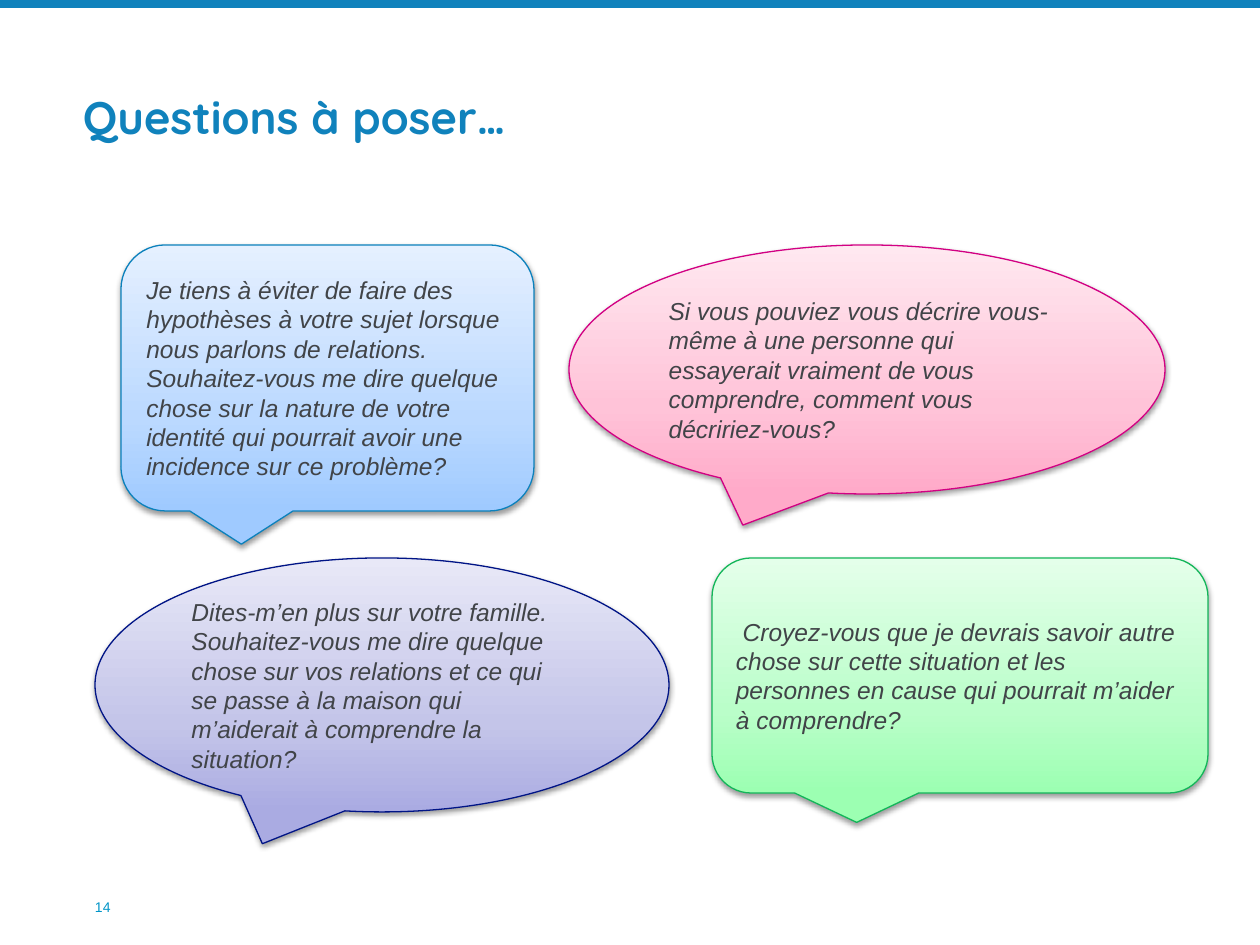
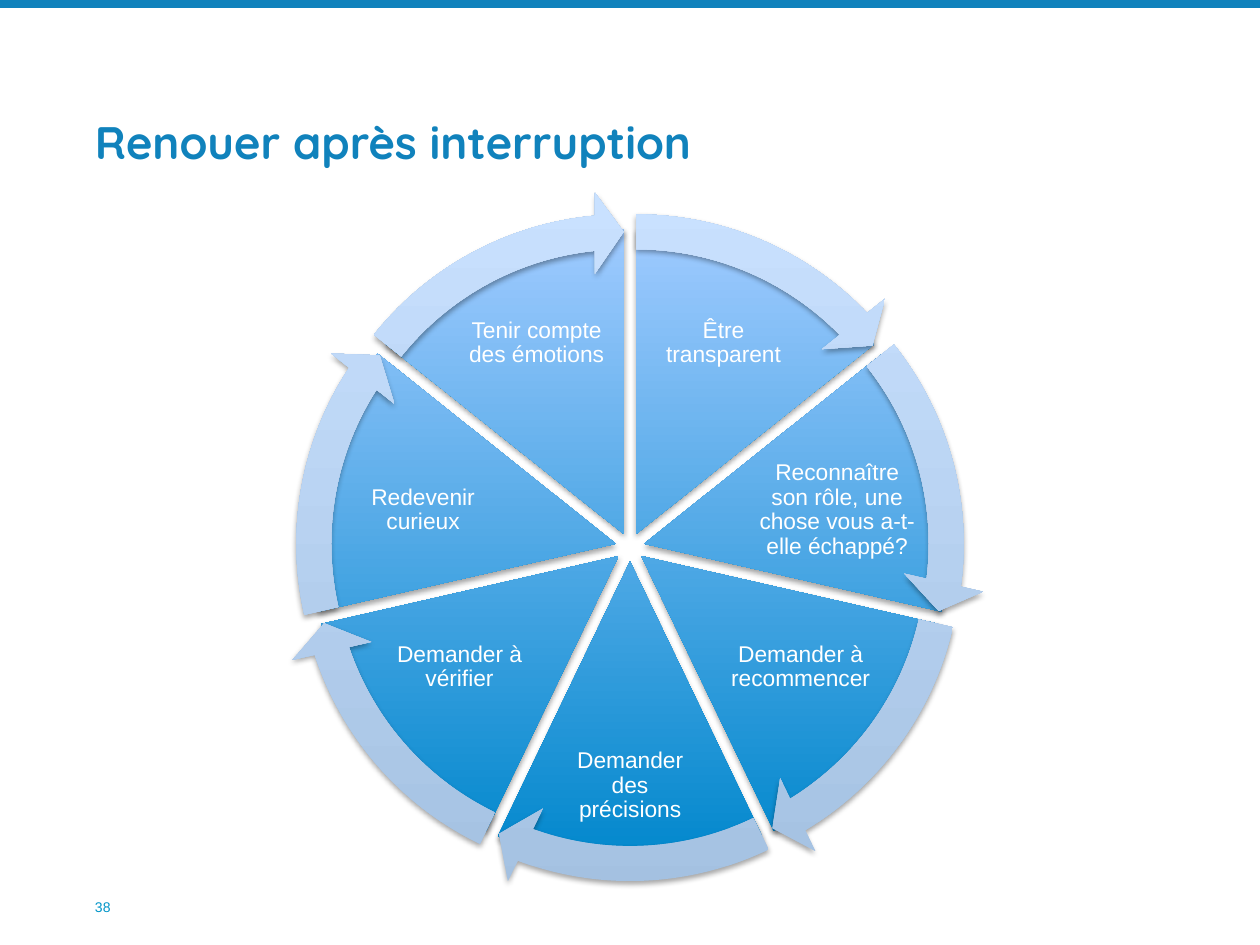
from dataclasses import dataclass
from math import cos, radians, sin

from lxml.etree import SubElement
from pptx import Presentation
from pptx.dml.color import RGBColor as RGB
from pptx.enum.shapes import MSO_SHAPE as SHAPE
from pptx.enum.text import MSO_ANCHOR as ANCHOR
from pptx.enum.text import MSO_AUTO_SIZE as AUTO_SIZE
from pptx.enum.text import PP_ALIGN as ALIGN
from pptx.oxml.ns import qn
from pptx.util import Emu, Pt

SLIDE_W, SLIDE_H = 1260, 945
EMU_PER_PX = 914400 / 126
ADJ_PER_DEGREE = 0.6


@dataclass(frozen=True)
class Theme:
    brand: str = "1082BC"
    page: str = "0095C8"
    body: str = "414448"
    white: str = "FFFFFF"
    slice_stops: tuple = ((0, "0087CC"), (100, "9FCAFF"))
    arrow_stops: tuple = ((0, "A4C1E1"), (100, "C9E1FF"))
    title_font: str = "Quicksand"
    text_font: str = "Arial"
    title_size: int = 26
    callout_size: int = 14
    label_size: int = 13
    page_size: int = 8


THEME = Theme()

CALLOUTS = [
    (SHAPE.ROUNDED_RECTANGULAR_CALLOUT, (121, 245, 413, 266), "0B81BC",
     ("9FCAFF", "BBD9FF", "E5F0FF"),
     "Je tiens à éviter de faire des hypothèses à votre sujet lorsque nous "
     "parlons de relations. Souhaitez-vous me dire quelque chose sur la nature "
     "de votre identité qui pourrait avoir une incidence sur ce problème?"),
    (SHAPE.OVAL_CALLOUT, (569, 245, 596, 249), "D20083",
     ("FFAAC9", "FFC3D8", "FFE8F0"),
     "Si vous pouviez vous décrire vous-même à une personne qui essayerait "
     "vraiment de vous comprendre, comment vous décririez-vous?"),
    (SHAPE.ROUNDED_RECTANGULAR_CALLOUT, (712, 558, 496, 235), "13B659",
     ("9CFFB2", "BAFEC9", "E4FFEA"),
     " Croyez-vous que je devrais savoir autre chose sur cette situation et "
     "les personnes en cause qui pourrait m’aider à comprendre?"),
    (SHAPE.OVAL_CALLOUT, (95, 558, 574, 254), "001486",
     ("AAABE2", "C4C5E9", "E8E8F7"),
     "Dites-m’en plus sur votre famille. Souhaitez-vous me dire quelque chose "
     "sur vos relations et ce qui se passe à la maison qui m’aiderait à "
     "comprendre la situation?"),
]

STEPS = [
    "Être transparent",
    "Reconnaître son rôle, une chose vous a-t-elle échappé?",
    "Demander à recommencer",
    "Demander des précisions",
    "Demander à vérifier",
    "Redevenir curieux",
    "Tenir compte des émotions",
]
RIGHT_LABELS = [(651, 285, 145, 116), (753, 459, 168, 102), (728, 611, 145, 112)]
BOTTOM_LABEL = (559, 735, 142, 102)
WHEEL_CENTER = (630, 547)
SLICE_OFFSET = 14.5
SLICE_SIZE, ARROW_SIZE = 610, 685
ARROW_HEAD = 3.275


def px(n):
    return Emu(round(n * EMU_PER_PX))


def box_emu(box):
    return [px(n) for n in box]


def write(tf, text, size, color, font=THEME.text_font, bold=False, italic=False,
          align=ALIGN.LEFT, anchor=ANCHOR.MIDDLE, inset=None):
    tf.word_wrap = True
    tf.auto_size = AUTO_SIZE.NONE
    tf.vertical_anchor = anchor
    if inset is not None:
        tf.margin_left = tf.margin_right = px(inset)
        tf.margin_top = tf.margin_bottom = px(inset)
    p = tf.paragraphs[0]
    p.text = text
    p.alignment = align
    f = p.runs[0].font
    f.name, f.size, f.bold, f.italic = font, Pt(size), bold, italic
    f.color.rgb = RGB.from_string(color)
    return p


def set_gradient(sp, stops):
    sp.fill.gradient()
    sp.fill.gradient_angle = 90
    stop_list = sp.fill._fill._gradFill.find(qn("a:gsLst"))
    for old in list(stop_list):
        stop_list.remove(old)
    for percent, color in stops:
        gs = SubElement(stop_list, qn("a:gs"), pos=str(percent * 1000))
        SubElement(gs, qn("a:srgbClr"), val=color)


def set_shadow(sp, distance, opacity):
    sp.shadow.inherit = False
    effects = sp._element.spPr.find(qn("a:effectLst"))
    shadow = SubElement(effects, qn("a:outerShdw"), blurRad="40000",
                        dist=str(distance), dir="5400000", rotWithShape="0")
    color = SubElement(shadow, qn("a:srgbClr"), val="000000")
    SubElement(color, qn("a:alpha"), val=str(opacity * 1000))


def add_page(prs, title, title_pos, number):
    slide = prs.slides.add_slide(prs.slide_layouts[5])
    band = slide.shapes.add_shape(SHAPE.RECTANGLE, *box_emu((0, 0, SLIDE_W, 8)))
    band.shadow.inherit = False
    band.fill.solid()
    band.fill.fore_color.rgb = RGB.from_string(THEME.brand)
    band.line.fill.background()
    page = slide.shapes.add_textbox(*box_emu((95, 890, 30, 25)))
    write(page.text_frame, number, THEME.page_size, THEME.page,
          anchor=ANCHOR.BOTTOM, inset=0)
    sp = slide.shapes.title
    sp.left, sp.top, sp.width, sp.height = box_emu((*title_pos, 1071, 78))
    write(sp.text_frame, title, THEME.title_size, THEME.brand, THEME.title_font,
          bold=True, anchor=ANCHOR.BOTTOM, inset=0)
    return slide


def add_callout(slide, kind, box, line, colors, text):
    sp = slide.shapes.add_shape(kind, *box_emu(box))
    set_gradient(sp, zip((0, 35, 100), colors))
    sp.line.color.rgb = RGB.from_string(line)
    sp.line.width = Pt(0.75)
    set_shadow(sp, 20000, 38)
    write(sp.text_frame, text, THEME.callout_size, THEME.body, italic=True)


def add_wheel_part(slide, kind, size, mid_angle, stops, adjustments):
    x = WHEEL_CENTER[0] + SLICE_OFFSET * cos(radians(mid_angle)) - size / 2
    y = WHEEL_CENTER[1] + SLICE_OFFSET * sin(radians(mid_angle)) - size / 2
    sp = slide.shapes.add_shape(kind, *box_emu((x, y, size, size)))
    for i, value in enumerate(adjustments):
        sp.adjustments[i] = value
    set_gradient(sp, stops)
    sp.line.fill.background()
    set_shadow(sp, 23000, 35)


def add_label(slide, box, text):
    label = slide.shapes.add_textbox(*box_emu(box))
    p = write(label.text_frame, text, THEME.label_size, THEME.white,
              align=ALIGN.CENTER, inset=2)
    p.line_spacing = 0.9


def add_wheel(slide, steps):
    left_labels = [(SLIDE_W - x - w, y, w, h) for x, y, w, h in RIGHT_LABELS]
    labels = [*RIGHT_LABELS, BOTTOM_LABEL, *reversed(left_labels)]
    sweep = 360 / len(steps)
    arcs = []
    for i, (text, box) in enumerate(zip(steps, labels)):
        start = (270 + i * sweep) % 360
        end = (270 + (i + 1) * sweep) % 360
        mid = start + sweep / 2
        start, end = start * ADJ_PER_DEGREE, end * ADJ_PER_DEGREE
        arcs.append((mid, start, end))
        add_wheel_part(slide, SHAPE.PIE, SLICE_SIZE, mid, THEME.slice_stops,
                       (start, end))
        add_label(slide, box, text)
    for mid, start, end in arcs:
        add_wheel_part(slide, SHAPE.CIRCULAR_ARROW, ARROW_SIZE, mid,
                       THEME.arrow_stops,
                       (0.051, ARROW_HEAD, end - ARROW_HEAD, start, 0.059))


def main():
    prs = Presentation()
    prs.slide_width, prs.slide_height = px(SLIDE_W), px(SLIDE_H)
    questions = add_page(prs, "Questions à poser…", (83, 66), "14")
    for callout in CALLOUTS:
        add_callout(questions, *callout)
    repair = add_page(prs, "Renouer après interruption", (95, 91), "38")
    add_wheel(repair, STEPS)
    prs.save("out.pptx")


if __name__ == "__main__":
    main()
